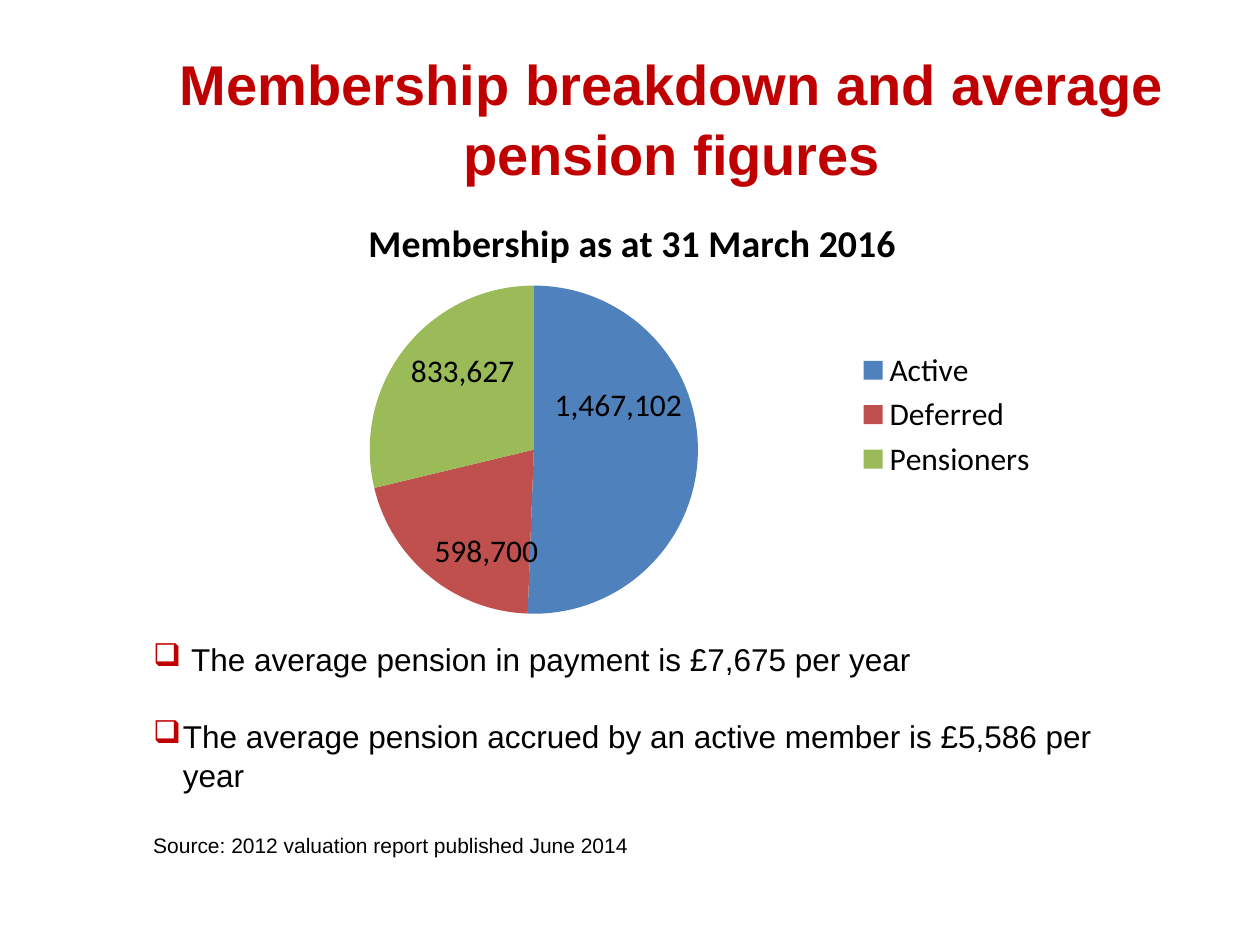
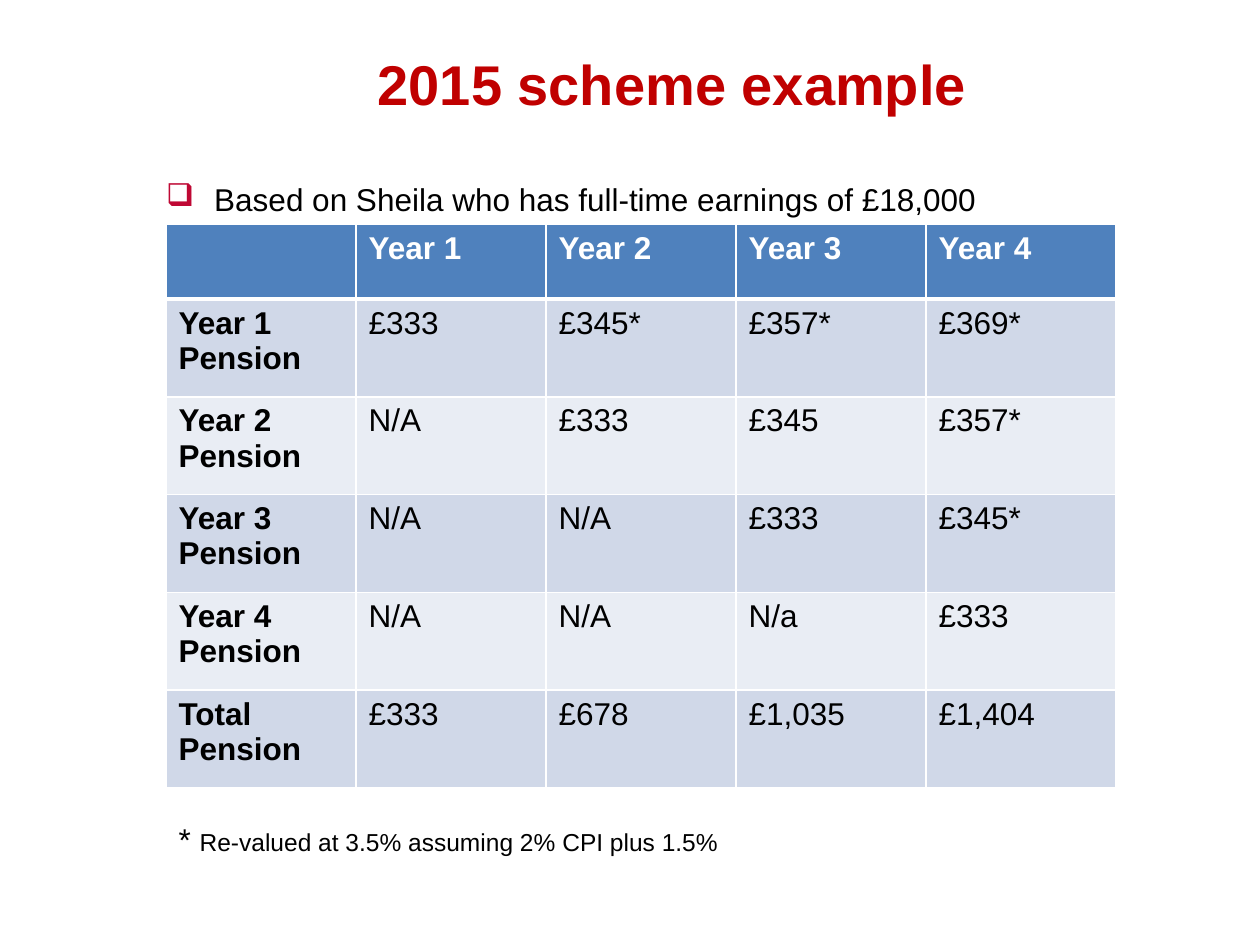
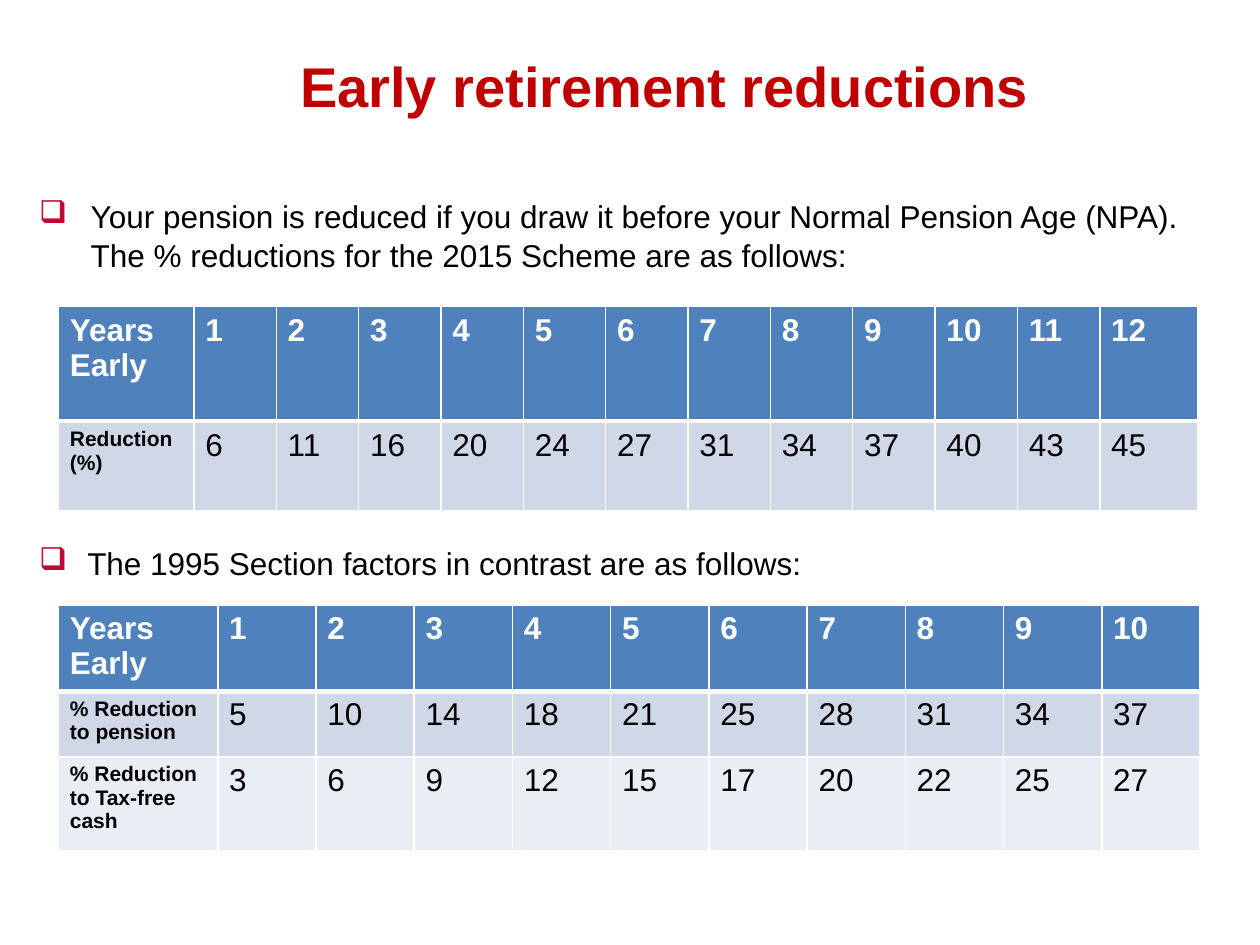
from lxml.etree import SubElement
from pptx import Presentation
from pptx.chart.data import CategoryChartData
from pptx.dml.color import RGBColor
from pptx.enum.chart import XL_CHART_TYPE, XL_LABEL_POSITION, XL_LEGEND_POSITION
from pptx.enum.text import MSO_ANCHOR, MSO_AUTO_SIZE, PP_ALIGN
from pptx.oxml import parse_xml
from pptx.oxml.ns import nsdecls, qn
from pptx.util import Cm, Pt

TITLE_RED = "C00000"
BULLET_RED = "BF0834"
BLACK = "000000"
WHITE = "FFFFFF"
HEADER_BLUE = "4F81BD"
BANDS = ["D0D8E8", "E9EDF4"]
SLICES = [HEADER_BLUE, "C0504D", "9BBB59"]
LINE_SPACING = 1.04


def color(value):
    return RGBColor.from_string(value)


def style_font(font, size=18, bold=False, ink=BLACK, name="Arial"):
    font.size = Pt(size)
    font.bold = bold
    font.name = name
    font.color.rgb = color(ink)


def write(paragraph, text, **style):
    run = paragraph.add_run()
    run.text = text
    style_font(run.font, **style)


def add_titled_slide(deck, heading, left=3.35, top=0.76, height=4.29):
    slide = deck.slides.add_slide(deck.slide_layouts[5])
    title = slide.shapes.title
    title.left, title.top = Cm(left), Cm(top)
    title.width, title.height = Cm(20.4), Cm(height)
    frame = title.text_frame
    frame.word_wrap = True
    frame.auto_size = MSO_AUTO_SIZE.NONE
    frame.vertical_anchor = MSO_ANCHOR.TOP
    frame.margin_top = Cm(0.19)
    paragraph = frame.paragraphs[0]
    paragraph.alignment = PP_ALIGN.CENTER
    paragraph.line_spacing = LINE_SPACING
    write(paragraph, heading, size=32, bold=True, ink=TITLE_RED)
    return slide


def add_text_frame(slide, left, top, width, height, inset=True):
    frame = slide.shapes.add_textbox(Cm(left), Cm(top), Cm(width), Cm(height)).text_frame
    frame.word_wrap = True
    if not inset:
        frame.margin_left = frame.margin_right = 0
        frame.margin_top = frame.margin_bottom = 0
    frame.paragraphs[0].line_spacing = LINE_SPACING
    return frame


def add_paragraph(frame, space_before):
    paragraph = frame.add_paragraph()
    paragraph.line_spacing = LINE_SPACING
    paragraph.space_before = Pt(space_before)
    return paragraph


def write_bullet(paragraph, text, indent, ink=BULLET_RED):
    properties = paragraph._p.get_or_add_pPr()
    properties.set("marL", str(Cm(indent)))
    properties.set("indent", str(-Cm(indent)))
    bullet_color = SubElement(properties, qn("a:buClr"))
    SubElement(bullet_color, qn("a:srgbClr"), val=ink)
    SubElement(properties, qn("a:buChar"), char="❑")
    write(paragraph, text)


def add_bullet_box(slide, text, left, top, width, height, indent):
    frame = add_text_frame(slide, left, top, width, height, inset=False)
    write_bullet(frame.paragraphs[0], text, indent)


def set_borders(cell, top=1, bottom=1):
    properties = cell._tc.get_or_add_tcPr()
    widths = {"lnL": 1, "lnR": 1, "lnT": top, "lnB": bottom}
    for position, (side, width) in enumerate(widths.items()):
        properties.insert(position, parse_xml(
            f'<a:{side} {nsdecls("a")} w="{Pt(width)}"><a:solidFill>'
            f'<a:srgbClr val="{WHITE}"/></a:solidFill></a:{side}>'))


def add_grid(slide, rows, left, top, widths, heights, label_size=18, side=0.25, vertical=0.13):
    table = slide.shapes.add_table(
        len(rows), len(widths), Cm(left), Cm(top), Cm(sum(widths)), Cm(sum(heights))).table
    table.horz_banding = False
    for column, width in zip(table.columns, widths):
        column.width = Cm(width)
    for r, (row, height) in enumerate(zip(rows, heights)):
        table.rows[r].height = Cm(height)
        for c, text in enumerate(row):
            cell = table.cell(r, c)
            cell.margin_left = cell.margin_right = Cm(side)
            cell.margin_top = cell.margin_bottom = Cm(vertical)
            cell.fill.solid()
            cell.fill.fore_color.rgb = color(BANDS[(r - 1) % 2] if r else HEADER_BLUE)
            set_borders(cell, top=3 if r == 1 else 1, bottom=1 if r else 3)
            if text:
                write(cell.text_frame.paragraphs[0], str(text),
                      size=label_size if r and c == 0 else 18,
                      bold=r == 0 or c == 0, ink=BLACK if r else WHITE)


def set_layout(parent, position, modes="", **fractions):
    for old in parent.findall(qn("c:layout")):
        parent.remove(old)
    values = "".join(f'<c:{key} val="{value}"/>' for key, value in fractions.items())
    parent.insert(position, parse_xml(
        f'<c:layout {nsdecls("c")}><c:manualLayout>{modes}{values}</c:manualLayout></c:layout>'))


def add_membership_pie(slide):
    members = CategoryChartData(number_format="#,##0")
    members.categories = ["Active", "Deferred", "Pensioners"]
    members.add_series("Series 1", [1467102, 598700, 833627])
    chart = slide.shapes.add_chart(
        XL_CHART_TYPE.PIE, Cm(4.24), Cm(3.05), Cm(16.94), Cm(10.62), members).chart
    style_font(chart.font, name="Calibri")

    write(chart.chart_title.text_frame.paragraphs[0], "Membership as at 31 March 2016",
          size=21.6, bold=True, name="Calibri")
    edges = '<c:xMode val="edge"/><c:yMode val="edge"/>'
    set_layout(chart.chart_title._element, 1, edges, x=0.18, y=0.11)
    plot_area = chart._chartSpace.find(".//" + qn("c:plotArea"))
    set_layout(plot_area, 0, '<c:layoutTarget val="inner"/>' + edges,
               x=0.07, y=0.255, w=0.63, h=0.623)

    chart.has_legend = True
    chart.legend.position = XL_LEGEND_POSITION.RIGHT
    chart.legend.include_in_layout = False
    style_font(chart.legend.font, name="Calibri")

    series = chart.plots[0].series[0]
    for index, slice_color in enumerate(SLICES):
        fill = series.points[index].format.fill
        fill.solid()
        fill.fore_color.rgb = color(slice_color)

    labels = series.data_labels
    labels.show_value = True
    labels.number_format = "#,##0"
    labels.number_format_is_linked = False
    labels.position = XL_LABEL_POSITION.INSIDE_END
    style_font(labels.font, name="Calibri")

    active_label = series.points[0].data_label
    active_label.position = XL_LABEL_POSITION.INSIDE_END
    style_font(active_label.font, name="Calibri")
    active = labels._element.find(qn("c:dLbl"))
    set_layout(active, 1, x=-0.01, y=-0.09)
    active.insert(2, parse_xml(
        f'<c:numFmt {nsdecls("c")} formatCode="#,##0" sourceLinked="0"/>'))


def build_membership(deck):
    slide = add_titled_slide(deck, "Membership breakdown and average pension figures", height=2.29)
    add_membership_pie(slide)
    frame = add_text_frame(slide, 2.84, 12.75, 20.29, 5.38)
    write_bullet(frame.paragraphs[0], " The average pension in payment is £7,675 per year",
                 0.6, TITLE_RED)
    write_bullet(add_paragraph(frame, 21.5),
                 "The average pension accrued by an active member is £5,586 per year",
                 0.6, TITLE_RED)
    write(add_paragraph(frame, 21.5), "Source: 2012 valuation report published June 2014", size=12)


def build_scheme_example(deck):
    slide = add_titled_slide(deck, "2015 scheme example")
    add_bullet_box(slide, "Based on Sheila who has full-time earnings of £18,000",
                   3.35, 3.6, 20.4, 0.8, 0.97)
    pensions = [
        ["", "Year 1", "Year 2", "Year 3", "Year 4"],
        ["Year 1 Pension", "£333", "£345*", "£357*", "£369*"],
        ["Year 2 Pension", "N/A", "£333", "£345", "£357*"],
        ["Year 3 Pension", "N/A", "N/A", "£333", "£345*"],
        ["Year 4 Pension", "N/A", "N/A", "N/a", "£333"],
        ["Total Pension", "£333", "£678", "£1,035", "£1,404"],
    ]
    add_grid(slide, pensions, 3.35, 4.53, [3.83] * 5, [1.5] + [1.97] * 5)
    footnote = add_text_frame(slide, 3.35, 16.38, 19.15, 1.02).paragraphs[0]
    write(footnote, "* ")
    write(footnote, "Re-valued at 3.5% assuming 2% CPI plus 1.5%", size=14)


def build_reductions(deck):
    slide = add_titled_slide(deck, "Early retirement reductions", left=3.2, top=0.79)
    add_bullet_box(slide, "Your pension is reduced if you draw it before your Normal Pension "
                   "Age (NPA). The % reductions for the 2015 Scheme are as follows:",
                   0.79, 3.94, 22.99, 1.6, 1.04)
    scheme_2015 = [
        ["Years Early", *range(1, 13)],
        ["Reduction (%)", 6, 11, 16, 20, 24, 27, 31, 34, 37, 40, 43, 45],
    ]
    add_grid(slide, scheme_2015, 1.18, 6.17, [2.73] + [1.66] * 11 + [1.97], [2.32, 1.8],
             label_size=12, side=0.23, vertical=0.13)
    add_bullet_box(slide, "The 1995 Section factors in contrast are as follows:",
                   0.79, 10.94, 22.99, 0.8, 0.97)
    section_1995 = [
        ["Years Early", *range(1, 11)],
        ["% Reduction to pension", 5, 10, 14, 18, 21, 25, 28, 31, 34, 37],
        ["% Reduction to Tax-free cash", 3, 6, 9, 12, 15, 17, 20, 22, 25, 27],
    ]
    add_grid(slide, section_1995, 1.18, 12.2, [3.21] + [1.98] * 10, [1.65, 1.32, 1.88],
             label_size=12, side=0.23, vertical=0.11)


def main():
    deck = Presentation()
    deck.slide_width, deck.slide_height = Cm(25.4), Cm(19.05)
    build_membership(deck)
    build_scheme_example(deck)
    build_reductions(deck)
    deck.save("out.pptx")


if __name__ == "__main__":
    main()
